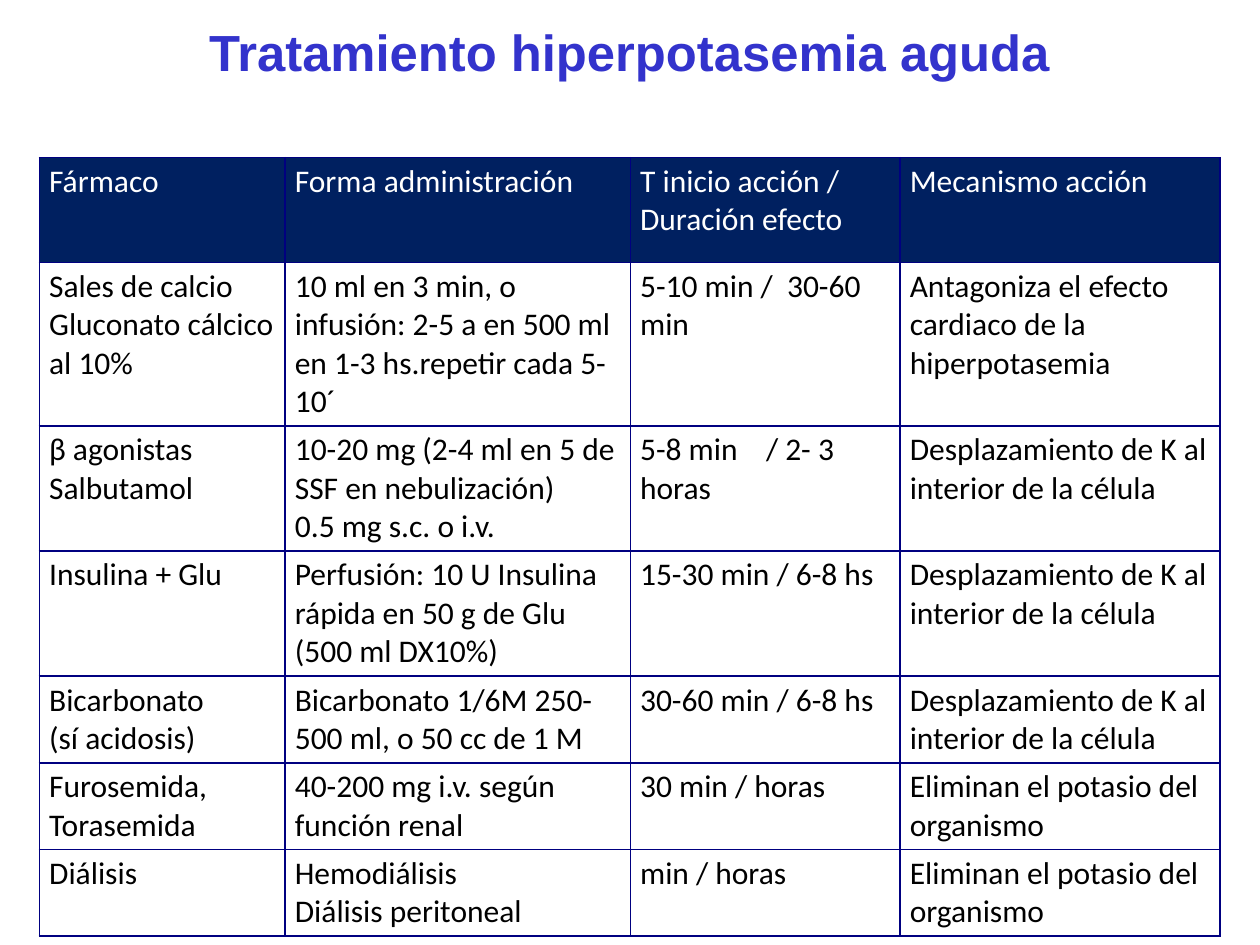
from lxml.etree import SubElement as Sub
from pptx import Presentation
from pptx.dml.color import RGBColor as Rgb
from pptx.enum.text import MSO_ANCHOR as Anchor, PP_ALIGN as Align
from pptx.oxml.ns import qn
from pptx.util import Pt

HUES = {
    "title": "3333CC",
    "head": "002060",
    "rule": "000080",
    "light": "FFFFFF",
    "dark": "000000",
}
COLS = [140.4, 197.3, 154.1, 182.9]
ROWS = [60, 92, 70.5, 70.5, 49, 49, 49]
SHIFT = "Desplazamiento de K al interior de la célula"
PURGE = "Eliminan el potasio del organismo"
DRUGS = [
    ["Fármaco", "Forma administración",
     "T inicio acción / Duración efecto", "Mecanismo acción"],
    ["Sales de calcio\nGluconato cálcico al 10%",
     "10 ml en 3 min, o infusión: 2-5 a en 500 ml en 1-3 hs.repetir cada 5-10´",
     "5-10 min /  30-60 min",
     "Antagoniza el efecto cardiaco de la hiperpotasemia"],
    ["β agonistas\nSalbutamol",
     "10-20 mg (2-4 ml en 5 de SSF en nebulización)\n0.5 mg s.c. o i.v.",
     "5-8 min    / 2- 3 horas", SHIFT],
    ["Insulina + Glu",
     "Perfusión: 10 U Insulina rápida en 50 g de Glu (500 ml DX10%)",
     "15-30 min / 6-8 hs", SHIFT],
    ["Bicarbonato\n(sí acidosis)",
     "Bicarbonato 1/6M 250-500 ml, o 50 cc de 1 M",
     "30-60 min / 6-8 hs", SHIFT],
    ["Furosemida,\nTorasemida", "40-200 mg i.v. según función renal",
     "30 min / horas", PURGE],
    ["Diálisis", "Hemodiálisis\nDiálisis peritoneal", "min / horas", PURGE],
]


def hue(name):
    return Rgb.from_string(HUES[name])


def style(font, name, size, tint, bold=False):
    font.name = name
    font.size = Pt(size)
    font.bold = bold
    font.color.rgb = hue(tint)


def add_title(slide, left, top, width, height):
    box = slide.shapes.add_textbox(Pt(left), Pt(top), Pt(width), Pt(height))
    frame = box.text_frame
    frame.word_wrap = True
    frame.vertical_anchor = Anchor.MIDDLE
    line = frame.paragraphs[0]
    line.text = "Tratamiento hiperpotasemia aguda"
    line.alignment = Align.CENTER
    line.line_spacing = 0.9
    style(line.font, "Arial", 29, "title", True)


def add_rules(cell):
    props = cell._tc.get_or_add_tcPr()
    for side in ("lnL", "lnR", "lnT", "lnB"):
        rule = Sub(props, qn(f"a:{side}"), w=str(Pt(1)))
        fill = Sub(rule, qn("a:solidFill"))
        Sub(fill, qn("a:srgbClr"), val=HUES["rule"])


def fill_cell(cell, text, head):
    add_rules(cell)
    cell.margin_left = cell.margin_right = Pt(5.6)
    cell.margin_top = cell.margin_bottom = Pt(2.8)
    if head:
        cell.fill.solid()
        cell.fill.fore_color.rgb = hue("head")
    else:
        cell.fill.background()
    cell.text = text
    for line in cell.text_frame.paragraphs:
        style(line.font, "Calibri", 18, "light" if head else "dark")


def add_drugs(slide, left, top):
    frame = slide.shapes.add_table(
        len(ROWS), len(COLS), Pt(left), Pt(top), Pt(sum(COLS)), Pt(sum(ROWS)))
    table = frame.table
    table.horz_banding = False
    for col, width in zip(table.columns, COLS):
        col.width = Pt(width)
    for row, height in zip(table.rows, ROWS):
        row.height = Pt(height)
    for r, texts in enumerate(DRUGS):
        for c, text in enumerate(texts):
            fill_cell(table.cell(r, c), text, r == 0)


def main():
    deck = Presentation()
    deck.slide_width, deck.slide_height = Pt(720), Pt(540)
    slide = deck.slides.add_slide(deck.slide_layouts[6])
    add_drugs(slide, 22.5, 90)
    add_title(slide, 49.5, 0, 621, 62.5)
    deck.save("out.pptx")


if __name__ == "__main__":
    main()
